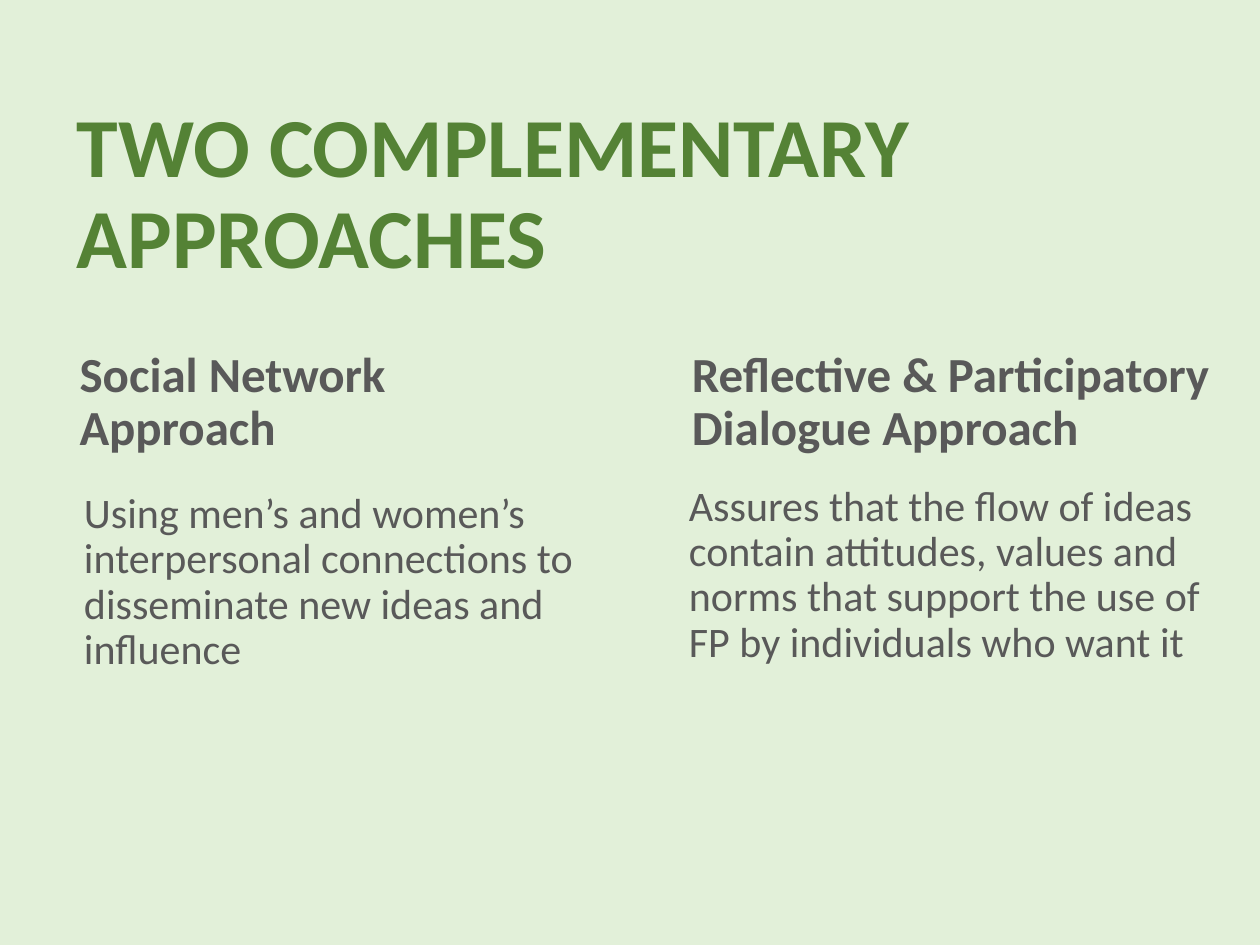
from dataclasses import dataclass

from pptx import Presentation
from pptx.dml.color import RGBColor
from pptx.enum.shapes import MSO_SHAPE as Preset
from pptx.enum.text import MSO_ANCHOR as Anchor, PP_ALIGN as Align
from pptx.util import Pt

PAPER, GREEN, GREY = "E2F0D9", "548235", "595959"
LEFT, RIGHT = 36.7, 386.6
HEAD_TOP, HEAD_TALL = 178.6, 87.1
BODY_TOP, BODY_TALL = 273.6, 266.4
WIDE = 318.2


@dataclass
class Block:
    text: str
    left: float
    top: float
    width: float
    height: float
    size: float
    color: str = GREY
    bold: bool = False
    anchor: Anchor = Anchor.TOP
    before: float = 10
    round: float = 0


def paint(color: str) -> RGBColor:
    return RGBColor.from_string(color)


def draw(slide, block: Block) -> None:
    """Place a text block, in an unfilled rounded shape if it has a corner."""
    box = tuple(map(Pt, (block.left, block.top, block.width, block.height)))
    if block.round:
        shape = slide.shapes.add_shape(Preset.ROUNDED_RECTANGLE, *box)
        shape.adjustments[0] = block.round
        shape.shadow.inherit = False
        shape.fill.background()
        shape.line.fill.background()
    else:
        shape = slide.shapes.add_textbox(*box)
    frame = shape.text_frame
    frame.word_wrap = True
    frame.vertical_anchor = block.anchor
    para = frame.paragraphs[0]
    para.text = block.text
    para.alignment = Align.LEFT
    para.line_spacing = 0.9
    para.space_before = Pt(block.before)
    for run in para.runs:
        font = run.font
        font.name, font.size, font.bold = "Calibri", Pt(block.size), block.bold
        font.color.rgb = paint(block.color)


def heading(text: str, left: float, width: float) -> Block:
    return Block(text, left, HEAD_TOP, width, HEAD_TALL, 28, bold=True,
                 anchor=Anchor.BOTTOM, round=0.066)


def detail(text: str, left: float, corner: float = 0) -> Block:
    return Block(text, left, BODY_TOP, WIDE, BODY_TALL, 24, round=corner)


BLOCKS = [
    Block("TWO COMPLEMENTARY \vAPPROACHES", LEFT, 87.8, 620.6, 48.2, 48,
          GREEN, True, Anchor.MIDDLE, 0),
    heading("Social Network Approach", LEFT, 291.6),
    detail("Using men’s and women’s interpersonal connections to "
           "disseminate new ideas and influence", LEFT, 0.054),
    heading("Reflective & Participatory Dialogue Approach", RIGHT, WIDE),
    detail("Assures that the flow of ideas contain attitudes, values and "
           "norms that support the use of FP by individuals who want it",
           RIGHT),
]


def main() -> None:
    deck = Presentation()
    deck.slide_width, deck.slide_height = Pt(720), Pt(540)
    slide = deck.slides.add_slide(deck.slide_layouts[6])
    fill = slide.background.fill
    fill.solid()
    fill.fore_color.rgb = paint(PAPER)
    for block in BLOCKS:
        draw(slide, block)
    deck.save("out.pptx")


if __name__ == "__main__":
    main()
